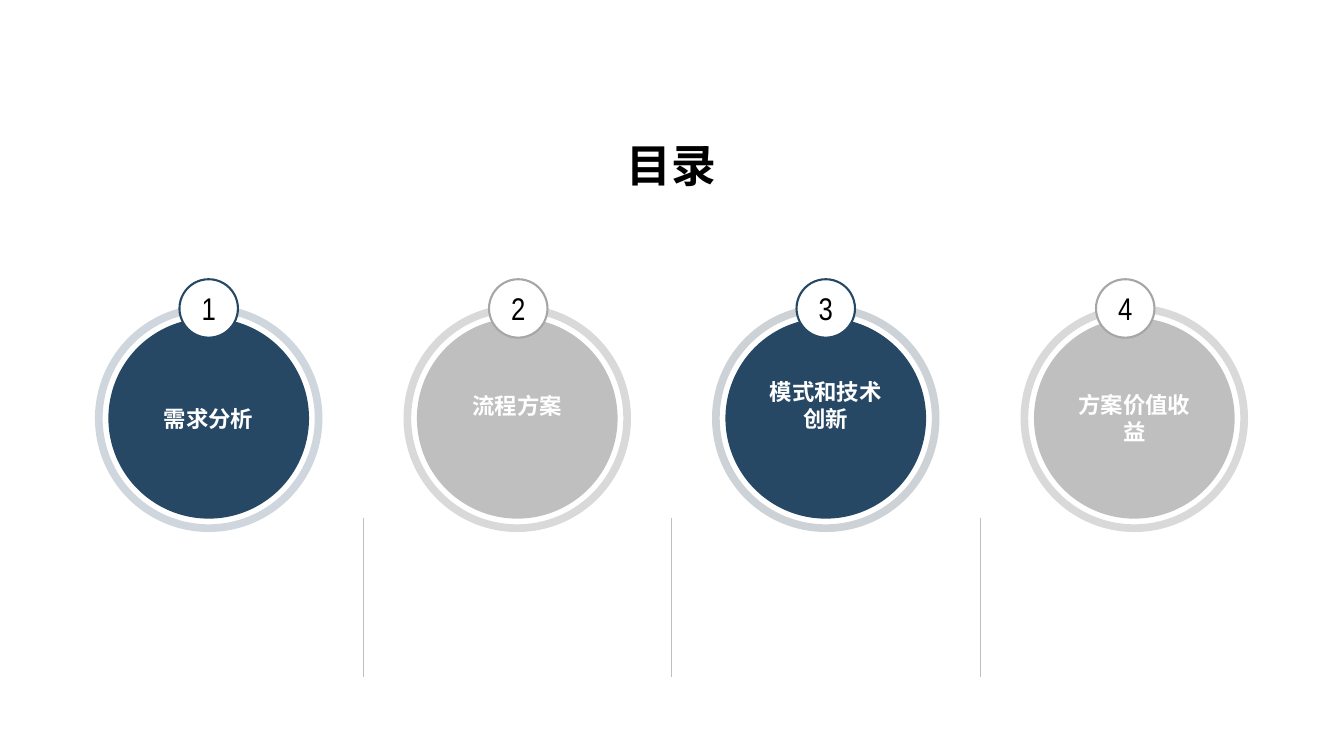
import pptx
import pptx.util
import pptx.dml.color
import pptx.enum.shapes
import pptx.enum.text
from lxml import etree

Inches = pptx.util.Inches
Pt = pptx.util.Pt
RGBColor = pptx.dml.color.RGBColor

WHITE = RGBColor(0xFF, 0xFF, 0xFF)
BLACK = RGBColor(0x00, 0x00, 0x00)
NAVY = RGBColor(0x26, 0x48, 0x65)
DARK_NAVY = RGBColor(0x1C, 0x36, 0x4C)
PALE_GREY = RGBColor(0xD9, 0xD9, 0xD9)
GREY = RGBColor(0xBF, 0xBF, 0xBF)
MID_GREY = RGBColor(0xA6, 0xA6, 0xA6)
DRAWING = "http://schemas.openxmlformats.org/drawingml/2006/main"

# Column grid, in inches
FIRST_CENTER, PITCH = 2.07, 3.06
CIRCLE_MIDDLE, BADGE_MIDDLE = 4.15, 3.06
RING_SIZE, DISC_SIZE, BADGE_SIZE = 2.18, 1.99, 0.58
DIVIDER_TOP, DIVIDER_BOTTOM = 5.14, 6.72

# Label, disc, ring, ring opacity in %, badge outline, badge shift, label lift
TOPICS = [
    ("需求分析", NAVY, NAVY, 22, NAVY, 0, 0),
    ("流程方案", GREY, PALE_GREY, 100, MID_GREY, 0.01, 0.13),
    ("模式和技术创新", NAVY, DARK_NAVY, 22, NAVY, 0, 0.13),
    ("方案价值收益", GREY, PALE_GREY, 100, MID_GREY, -0.09, 0),
]

presentation = pptx.Presentation()
presentation.slide_width = Inches(13.33)
presentation.slide_height = Inches(7.5)
slide = presentation.slides.add_slide(presentation.slide_layouts[6])


def add_circle(center, middle, size, fill, outline=None, width=0):
    circle = slide.shapes.add_shape(
        pptx.enum.shapes.MSO_SHAPE.OVAL, Inches(center - size / 2),
        Inches(middle - size / 2), Inches(size), Inches(size))
    circle.shadow.inherit = False
    circle.fill.solid()
    circle.fill.fore_color.rgb = fill
    if outline is None:
        circle.line.fill.background()
    else:
        circle.line.color.rgb = outline
        circle.line.width = Pt(width)
    return circle


def write_centred(shape, text, font_name, size, color, bold=False):
    frame = shape.text_frame
    frame.word_wrap = True
    frame.vertical_anchor = pptx.enum.text.MSO_ANCHOR.MIDDLE
    frame.text = text
    paragraph = frame.paragraphs[0]
    paragraph.alignment = pptx.enum.text.PP_ALIGN.CENTER
    font = paragraph.runs[0].font
    font.name, font.size, font.bold = font_name, Pt(size), bold
    font.color.rgb = color


# Title
title = slide.shapes.add_textbox(Inches(0.73), Inches(1.24), Inches(11.86), Inches(0.78))
write_centred(title, "目录", "Arial", 32, BLACK, bold=True)

# Topics: ring, labelled disc and numbered badge
for index, (label, disc_color, ring_color, opacity, badge_color, shift, lift) in enumerate(TOPICS):
    center = FIRST_CENTER + index * PITCH
    ring = add_circle(center, CIRCLE_MIDDLE, RING_SIZE, WHITE, ring_color, 5.5)
    if opacity < 100:
        ring_line_color = ring.line._ln.find(f".//{{{DRAWING}}}srgbClr")
        etree.SubElement(ring_line_color, f"{{{DRAWING}}}alpha", val=str(opacity * 1000))

    disc = add_circle(center, CIRCLE_MIDDLE, DISC_SIZE, disc_color)
    write_centred(disc, label, "Arial", 16, WHITE, bold=True)
    disc.text_frame.margin_bottom = Inches(0.05 + 2 * lift)

    badge = add_circle(center + shift, BADGE_MIDDLE, BADGE_SIZE, WHITE, badge_color, 1.5)
    write_centred(badge, str(index + 1), "Arial Narrow", 22.4, BLACK)
    badge.text_frame.margin_left = badge.text_frame.margin_right = 0

# Dividers halfway between neighbouring topics
for index in range(len(TOPICS) - 1):
    x = Inches(FIRST_CENTER + (index + 0.5) * PITCH)
    divider = slide.shapes.add_connector(
        pptx.enum.shapes.MSO_CONNECTOR.STRAIGHT,
        x, Inches(DIVIDER_TOP), x, Inches(DIVIDER_BOTTOM))
    divider.line.color.rgb = GREY
    divider.line.width = Pt(0.25)
    etree.SubElement(divider._element.spPr, f"{{{DRAWING}}}effectLst")

presentation.save("out.pptx")
